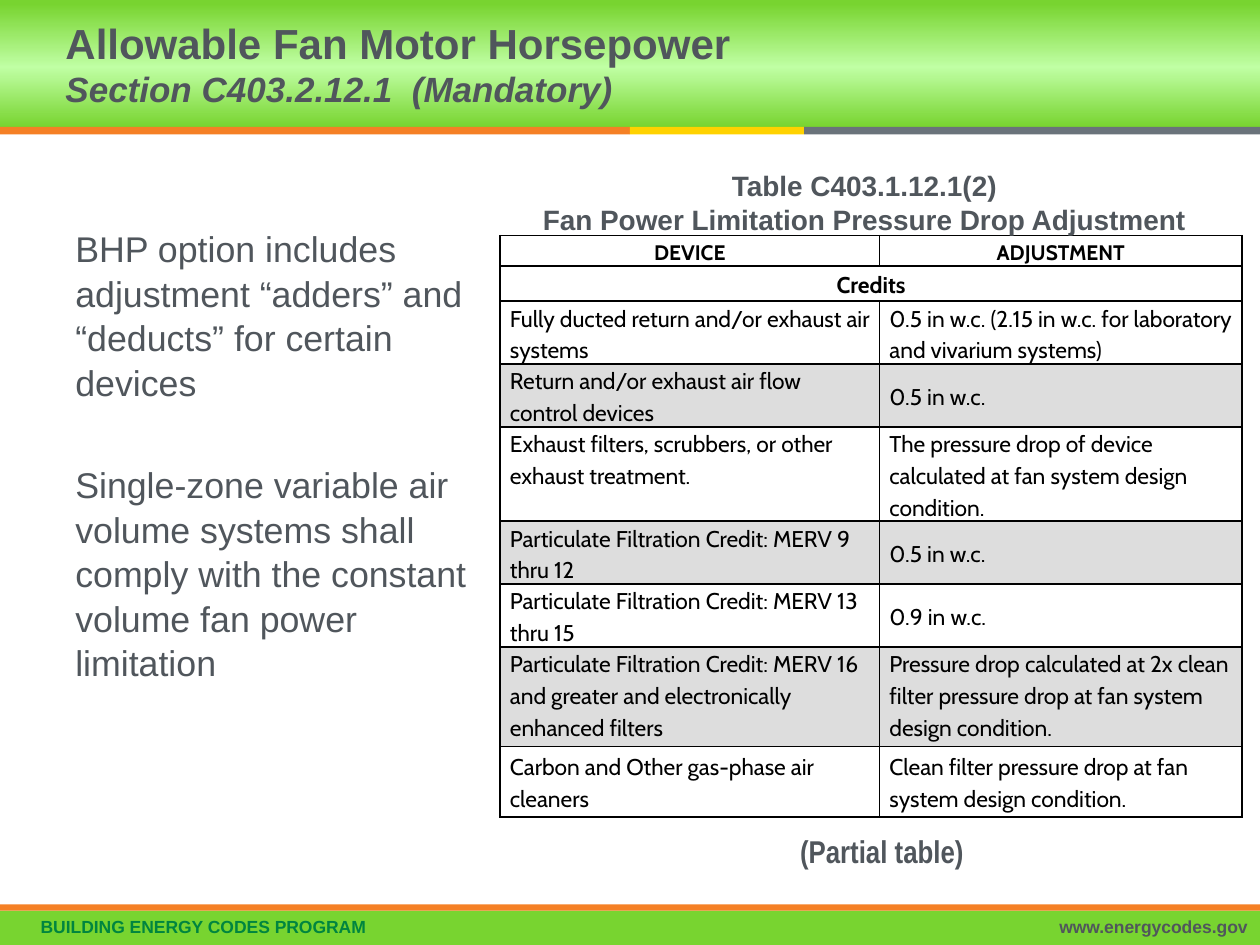
import copy

import pptx
import pptx.dml.color
import pptx.enum.shapes
import pptx.enum.text
import pptx.oxml
import pptx.oxml.ns
import pptx.util

Cm, Pt = pptx.util.Cm, pptx.util.Pt
ALIGN = pptx.enum.text.PP_ALIGN
ANCHOR = pptx.enum.text.MSO_ANCHOR

COLORS = {
    "text": "50565C", "green": "78D430", "light": "C0FFA4", "program": "00853F",
    "orange": "F58025", "yellow": "FFD200", "slate": "6A737B",
    "black": "000000", "white": "FFFFFF", "shade": "DDDDDD",
}

# left, top, width, height in cm, then fill
BARS = [
    (0, 18.36, 25.4, 0.69, "green"),
    (0, 2.56, 12.7, 0.15, "orange"),
    (12.7, 2.56, 3.51, 0.15, "yellow"),
    (16.21, 2.56, 9.19, 0.15, "slate"),
    (0, 18.23, 25.4, 0.13, "orange"),
]

# box in cm, paragraphs, then options
TEXTS = [
    ((0.57, 18.39, 15, 0.66), ["BUILDING ENERGY CODES PROGRAM"],
     dict(size=10, color="program", bold=True, line=0.9)),
    ((15.21, 18.39, 10.19, 0.66), ["www.energycodes.gov"],
     dict(size=10, bold=True, line=0.9, align=ALIGN.RIGHT)),
    ((1.27, 4.42, 8.79, 7.9),
     ["BHP option includes adjustment “adders” and “deducts” for certain devices",
      "Single-zone variable air volume systems shall comply with the constant "
      "volume fan power limitation"],
     dict(size=20.4, line=1.04, gap=33)),
    ((15.88, 16.79, 7.44, 0.86), ["(Partial table)"],
     dict(size=18, font="Arial Narrow", bold=True, line=0.8)),
    ((10.54, 3.28, 13.77, 1.63),
     ["Table C403.1.12.1(2)", "Fan Power Limitation Pressure Drop Adjustment"],
     dict(size=16, bold=True, align=ALIGN.CENTER)),
]
TITLE = ["Allowable Fan Motor Horsepower", "Section C403.2.12.1  (Mandatory)"]

COLS = [7.65, 7.31]
HEADS = [(0.61, 12, ["DEVICE", "ADJUSTMENT"]), (0.71, 13, ["Credits", ""])]
# height in cm, anchor, device, adjustment
ROWS = [
    (1.24, ANCHOR.MIDDLE, "Fully ducted return and/or exhaust air systems",
     "0.5 in w.c. (2.15 in w.c. for laboratory and vivarium systems)"),
    (1.24, ANCHOR.MIDDLE, "Return and/or exhaust air flow control devices", "0.5 in w.c."),
    (1.88, ANCHOR.TOP, "Exhaust filters, scrubbers, or other exhaust treatment.",
     "The pressure drop of device calculated at fan system design condition."),
    (1.24, ANCHOR.MIDDLE, "Particulate Filtration Credit: MERV 9 thru 12", "0.5 in w.c."),
    (1.24, ANCHOR.MIDDLE, "Particulate Filtration Credit: MERV 13 thru 15", "0.9 in w.c."),
    (2.01, ANCHOR.TOP,
     "Particulate Filtration Credit: MERV 16 and greater and electronically enhanced filters",
     "Pressure drop calculated at 2x clean filter pressure drop at fan system design condition."),
    (1.42, ANCHOR.MIDDLE, "Carbon and Other gas-phase air cleaners",
     "Clean filter pressure drop at fan system design condition."),
]


def rgb(name):
    return pptx.dml.color.RGBColor.from_string(COLORS[name])


def style(para, size, color="text", font="Arial", bold=False, line=None, align=ALIGN.LEFT):
    para.alignment = align
    if line:
        para.line_spacing = line
    face = para.font
    face.name, face.size, face.bold = font, Pt(size), bold
    face.color.rgb = rgb(color)


def add_bar(slide, box):
    bar = slide.shapes.add_shape(pptx.enum.shapes.MSO_SHAPE.RECTANGLE, *map(Cm, box))
    bar.shadow.inherit = False
    bar.line.fill.background()
    return bar


def add_text(slide, box, lines, gap=0, **look):
    frame = slide.shapes.add_textbox(*map(Cm, box)).text_frame
    frame.word_wrap = True
    for i, text in enumerate(lines):
        para = frame.add_paragraph() if i else frame.paragraphs[0]
        para.text = text
        style(para, **look)
        if i and gap:
            para.space_before = Pt(gap)
    return frame


def add_band(slide):
    """Header band, green at both edges and light in the middle."""
    fill = add_bar(slide, (0, 0, 25.4, 2.56)).fill
    fill.gradient()
    fill.gradient_angle = 90
    last = fill.gradient_stops[1]
    stops = fill.gradient_stops[0]._gs.getparent()
    stops.append(copy.deepcopy(last._gs))
    for stop, (place, name) in zip(fill.gradient_stops,
                                   [(0, "green"), (0.47, "light"), (0.97, "green")]):
        stop.position = place
        stop.color.rgb = rgb(name)


def add_edges(cell):
    props = cell._tc.get_or_add_tcPr()
    for i, side in enumerate(("lnL", "lnR", "lnT", "lnB")):
        props.insert(i, pptx.oxml.parse_xml(
            f'<a:{side} {pptx.oxml.ns.nsdecls("a")} w="12700"><a:solidFill>'
            f'<a:srgbClr val="{COLORS["black"]}"/></a:solidFill></a:{side}>'))


def fill_cell(cell, text, fill, anchor, **look):
    cell.text = text
    cell.vertical_anchor = anchor
    cell.margin_left = cell.margin_right = Cm(0.2)
    cell.margin_top = cell.margin_bottom = 0
    cell.fill.solid()
    cell.fill.fore_color.rgb = rgb(fill)
    add_edges(cell)
    style(cell.text_frame.paragraphs[0], color="black", font="Cabin", line=1.15, **look)


def add_grid(slide):
    tall = [row[0] for row in HEADS + ROWS]
    grid = slide.shapes.add_table(len(tall), len(COLS), Cm(10.08), Cm(4.75),
                                  Cm(sum(COLS)), Cm(sum(tall))).table
    for col, width in zip(grid.columns, COLS):
        col.width = Cm(width)
    for row, height in zip(grid.rows, tall):
        row.height = Cm(height)
    for r, (_, size, texts) in enumerate(HEADS):
        for c, text in enumerate(texts):
            fill_cell(grid.cell(r, c), text, "white", ANCHOR.MIDDLE,
                      size=size, bold=True, align=ALIGN.CENTER)
    grid.cell(1, 0).merge(grid.cell(1, 1))
    for r, (_, anchor, *texts) in enumerate(ROWS):
        for c, text in enumerate(texts):
            fill_cell(grid.cell(r + len(HEADS), c), text,
                      "shade" if r % 2 else "white", anchor, size=13)


def main():
    deck = pptx.Presentation()
    deck.slide_width, deck.slide_height = Cm(25.4), Cm(19.05)
    slide = deck.slides.add_slide(deck.slide_layouts[6])
    add_band(slide)
    for *box, name in BARS:
        bar = add_bar(slide, box)
        bar.fill.solid()
        bar.fill.fore_color.rgb = rgb(name)
    title = add_text(slide, (1.07, 0, 15.16, 2.56), TITLE, size=24, bold=True)
    title.vertical_anchor = ANCHOR.MIDDLE
    section = title.paragraphs[1].font
    section.size, section.italic = Pt(20), True
    add_grid(slide)
    for box, lines, look in TEXTS:
        add_text(slide, box, lines, **look)
    deck.save("out.pptx")


if __name__ == "__main__":
    main()
